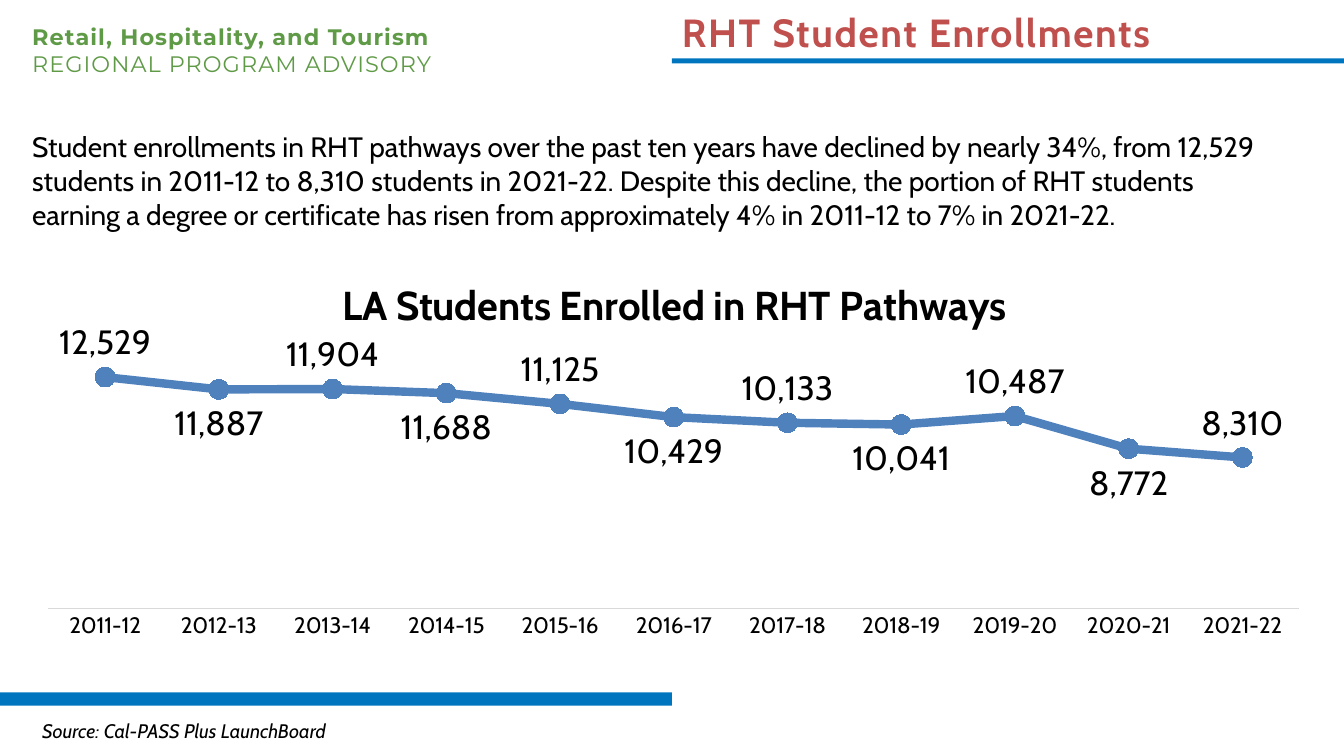
from lxml import etree
from pptx import Presentation
from pptx.chart.data import CategoryChartData
from pptx.dml.color import RGBColor
from pptx.enum.chart import XL_CHART_TYPE, XL_LABEL_POSITION, XL_MARKER_STYLE, XL_TICK_MARK
from pptx.enum.shapes import MSO_SHAPE
from pptx.enum.text import MSO_AUTO_SIZE
from pptx.oxml import parse_xml
from pptx.oxml.ns import nsdecls, qn
from pptx.util import Cm, Pt

LINE_CHART = XL_CHART_TYPE.LINE_MARKERS
ABOVE, BELOW = XL_LABEL_POSITION.ABOVE, XL_LABEL_POSITION.BELOW
CIRCLE = XL_MARKER_STYLE.CIRCLE
NO_TICK = XL_TICK_MARK.NONE
RECTANGLE = MSO_SHAPE.RECTANGLE
GROW = MSO_AUTO_SIZE.SHAPE_TO_FIT_TEXT

THEME = {
    "text": "000000", "heading": "C0504D", "advisory": "5F9A47", "bar": "0075BF",
    "series": "4F81BD", "axis": "D9D9D9", "paper": "FFFFFF",
    "body_font": "Cabin", "advisory_font": "Montserrat",
    "heading_size": 28, "chart_title_size": 28.8, "label_size": 24, "body_size": 20,
    "small_size": 16, "source_size": 14,
}

PAGE_WIDTH, PAGE_HEIGHT = 33.87, 19.05
HALF = PAGE_WIDTH / 2
MARGIN = 0.56

HEADING = "RHT Student Enrollments"
ADVISORY = ["Retail, Hospitality, and Tourism", "REGIONAL PROGRAM ADVISORY"]
SUMMARY = (
    "Student enrollments in RHT pathways over the past ten years have declined by nearly 34%, "
    "from 12,529 students in 2011-12 to 8,310 students in 2021-22. Despite this decline, the "
    "portion of RHT students earning a degree or certificate has risen from approximately 4% "
    "in 2011-12 to 7% in 2021-22."
)
SOURCE = "Source: Cal-PASS Plus LaunchBoard"
CHART_TITLE = "LA Students Enrolled in RHT Pathways"
ENROLLMENTS = {
    "2011-12": 12529, "2012-13": 11887, "2013-14": 11904, "2014-15": 11688,
    "2015-16": 11125, "2016-17": 10429, "2017-18": 10133, "2018-19": 10041,
    "2019-20": 10487, "2020-21": 8772, "2021-22": 8310,
}
BARS = [(0, 17.45, HALF, 0.33), (HALF, 1.47, HALF, 0.13)]
CHART_AREA = (MARGIN, 6.2, 32.84, 10.03)
PLOT_LAYOUT = {"x": 0.02, "y": 0.24, "w": 0.96, "h": 0.67}
TITLE_LAYOUT = {"x": 0.24, "y": 0.06}


def color(name):
    return RGBColor.from_string(THEME[name])


def style_font(font, size, name="body_font", tint="text", bold=False, italic=False):
    font.name = THEME[name]
    font.size = Pt(THEME[size])
    font.bold = bold
    font.italic = italic
    font.color.rgb = color(tint)


def add_span(para, text, spacing=0, **style):
    span = para.add_run()
    span.text = text
    style_font(span.font, **style)
    if spacing:
        span.font._element.set("spc", str(round(spacing * 100)))


def add_text(page, area, lines):
    box = page.shapes.add_textbox(*map(Cm, area))
    frame = box.text_frame
    frame.word_wrap = True
    frame.auto_size = GROW
    for index, (text, style) in enumerate(lines):
        para = frame.add_paragraph() if index else frame.paragraphs[0]
        add_span(para, text, **style)


def add_bar(page, area):
    bar = page.shapes.add_shape(RECTANGLE, *map(Cm, area))
    bar.shadow.inherit = False
    bar.fill.solid()
    bar.fill.fore_color.rgb = color("bar")
    bar.line.fill.background()


def place(element, fractions, inner=False):
    for old in element.findall(qn("c:layout")):
        element.remove(old)
    layout = etree.Element(qn("c:layout"))
    manual = etree.SubElement(layout, qn("c:manualLayout"))
    settings = [("layoutTarget", "inner")] if inner else []
    settings += [("xMode", "edge"), ("yMode", "edge"), *fractions.items()]
    for tag, value in settings:
        etree.SubElement(manual, qn("c:" + tag)).set("val", str(value))
    if inner:
        element.insert(0, layout)
    else:
        element.find(qn("c:tx")).addnext(layout)


def add_enrollment_chart(page):
    data = CategoryChartData(number_format="#,##0")
    data.categories = list(ENROLLMENTS)
    data.add_series("Series 1", list(ENROLLMENTS.values()))
    chart = page.shapes.add_chart(LINE_CHART, *map(Cm, CHART_AREA), data).chart
    style_font(chart.font, "label_size")
    chart.has_legend = False
    chart.has_title = True
    add_span(chart.chart_title.text_frame.paragraphs[0], CHART_TITLE,
             size="chart_title_size", bold=True)
    chart.chart_title.include_in_layout = False

    space = chart._chartSpace
    background = parse_xml(
        f'<c:spPr {nsdecls("c", "a")}><a:solidFill><a:srgbClr val="{THEME["paper"]}"/>'
        "</a:solidFill><a:ln><a:noFill/></a:ln></c:spPr>")
    space.chart.addnext(background)
    place(space.chart.find(qn("c:title")), TITLE_LAYOUT)
    place(space.chart.plotArea, PLOT_LAYOUT, inner=True)

    years, counts = chart.category_axis, chart.value_axis
    style_font(years.tick_labels.font, "small_size")
    years.major_tick_mark = NO_TICK
    years.format.line.color.rgb = color("axis")
    years.format.line.width = Pt(0.75)
    counts.visible = False
    counts.has_major_gridlines = False
    counts.minimum_scale, counts.maximum_scale = 400, 14400

    plot = chart.plots[0]
    plot.vary_by_categories = False
    series = plot.series[0]
    series.smooth = False
    series.format.line.color.rgb = color("series")
    series.format.line.width = Pt(6)
    marker = series.marker
    marker.style, marker.size = CIRCLE, 14
    marker.format.fill.solid()
    marker.format.fill.fore_color.rgb = color("series")
    marker.format.line.color.rgb = color("series")

    labels = series.data_labels
    labels.show_value = True
    labels.position = ABOVE
    labels.number_format = "#,##0"
    labels.number_format_is_linked = False
    style_font(labels.font, "label_size")
    for index in range(1, len(ENROLLMENTS), 2):
        label = series.points[index].data_label
        style_font(label.font, "label_size")
        label.position = BELOW


def main():
    deck = Presentation()
    deck.slide_width, deck.slide_height = Cm(PAGE_WIDTH), Cm(PAGE_HEIGHT)
    page = deck.slides.add_slide(deck.slide_layouts[6])
    for area in BARS:
        add_bar(page, area)
    add_text(page, (0.81, 17.98, 21.29, 0.86),
             [(SOURCE, {"size": "source_size", "italic": True})])
    add_text(page, (HALF, 0.08, HALF, 1.45),
             [(HEADING, {"size": "heading_size", "tint": "heading", "bold": True,
                         "spacing": 1.2})])
    advisory = {"size": "small_size", "name": "advisory_font", "tint": "advisory", "spacing": 0.8}
    add_text(page, (MARGIN, 0.46, 12.09, 2.31),
             [(text, {**advisory, "bold": index == 0}) for index, text in enumerate(ADVISORY)])
    add_enrollment_chart(page)
    add_text(page, (MARGIN, 3.15, 31.93, 2.82), [(SUMMARY, {"size": "body_size"})])
    deck.save("out.pptx")


if __name__ == "__main__":
    main()
